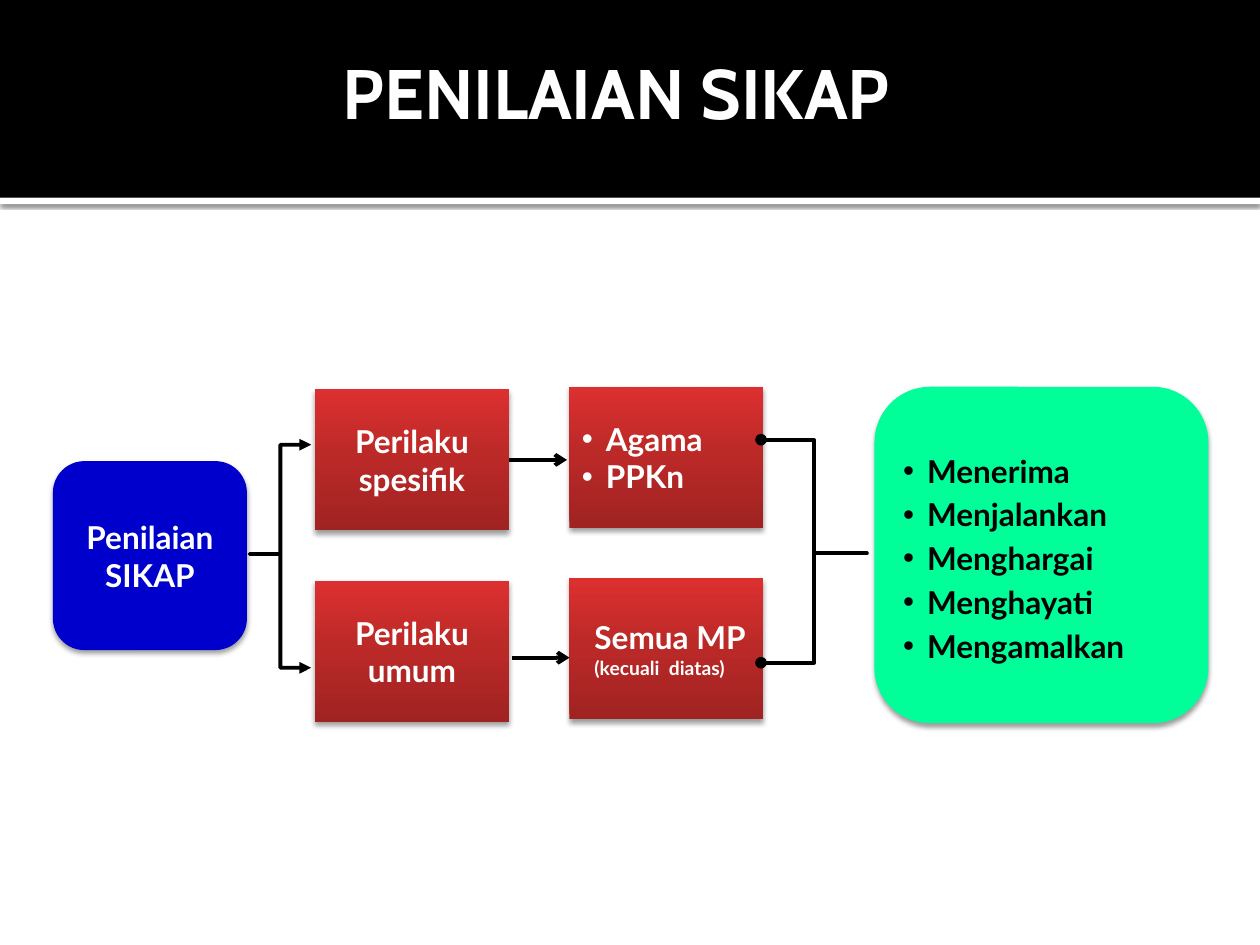
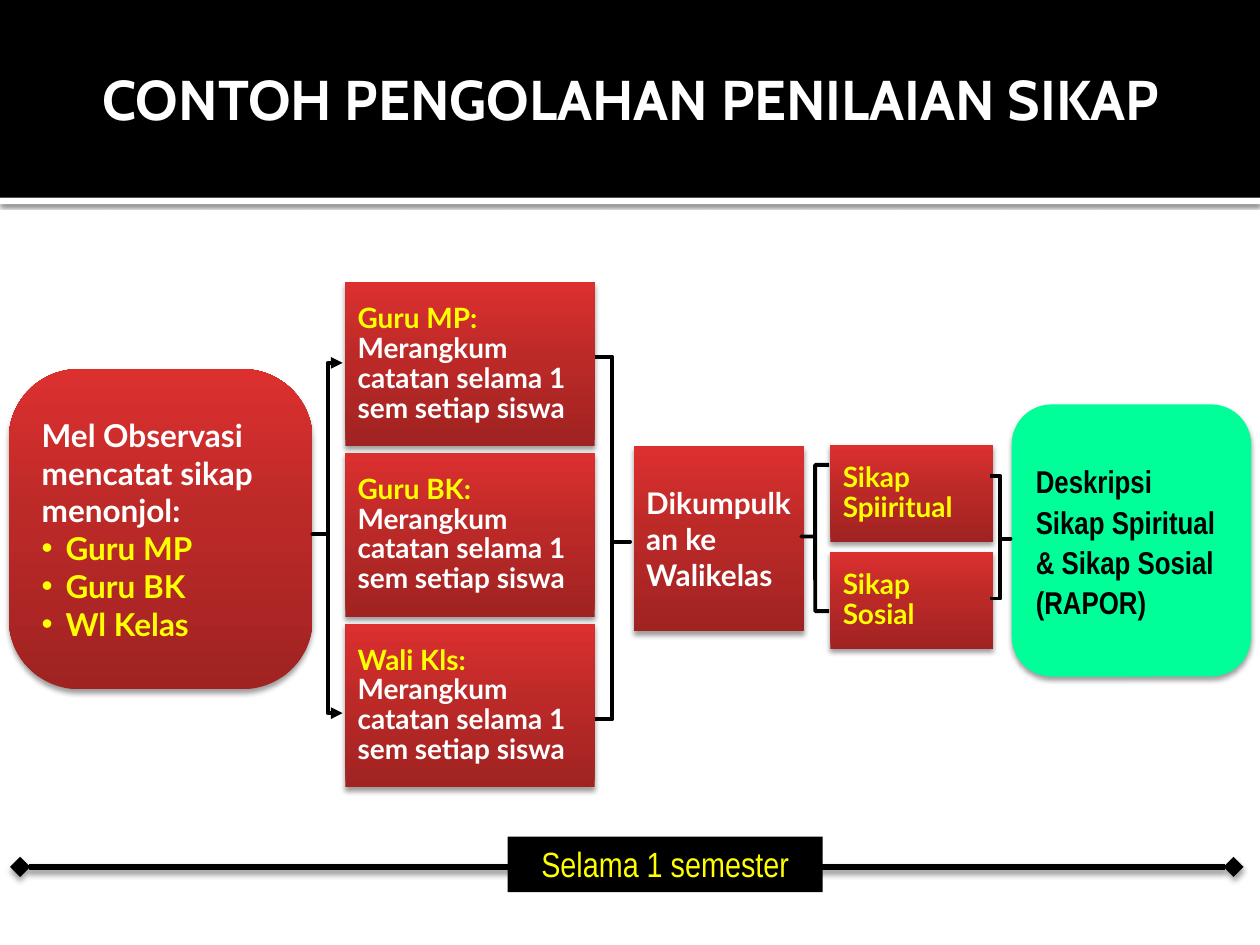
from copy import deepcopy

from lxml.etree import SubElement
from pptx import Presentation
from pptx.dml.color import RGBColor
from pptx.enum.shapes import MSO_CONNECTOR, MSO_SHAPE
from pptx.enum.text import MSO_ANCHOR, PP_ALIGN
from pptx.oxml.ns import qn
from pptx.util import Inches, Pt

BLACK = RGBColor(0x00, 0x00, 0x00)
WHITE = RGBColor(0xFF, 0xFF, 0xFF)
YELLOW = RGBColor(0xFF, 0xFF, 0x00)
BLUE = RGBColor(0x00, 0x00, 0xCC)
GREEN = RGBColor(0x00, 0xFF, 0x99)
RED_STOPS = [
    (0, RGBColor(0xA0, 0x23, 0x22)),
    (0.55, RGBColor(0xBC, 0x2A, 0x28)),
    (1, RGBColor(0xDC, 0x30, 0x2F)),
]

RECT, ROUND = MSO_SHAPE.RECTANGLE, MSO_SHAPE.ROUNDED_RECTANGLE
LEFT, CENTER = PP_ALIGN.LEFT, PP_ALIGN.CENTER
BODY_FONT, TITLE_FONT, NARROW_FONT = "Lato", "Cabin", "Arial Narrow"

# Shadows: opacity in percent, blur and distance in points
BOX_SHADOW = (38, 3.1, 2)
BAND_SHADOW = (60, 2.5, 0.8)

BULLET = {"margin": 0.19, "bullet": True}


def finish(shape, shadow=None, width=None, head=None, tail=None):
    """Set the outline, its ends and the shadow; no width means no outline."""
    properties = shape.element.spPr
    if width is None:
        shape.line.fill.background()
    else:
        shape.line.color.rgb = BLACK
        shape.line.width = Pt(width)
        for tag, end in (("a:headEnd", head), ("a:tailEnd", tail)):
            if end:
                SubElement(properties.find(qn("a:ln")), qn(tag), type=end)
    effects = SubElement(properties, qn("a:effectLst"))
    if shadow:
        opacity, blur, distance = shadow
        outer = SubElement(effects, qn("a:outerShdw"), blurRad=str(Pt(blur)),
                           dist=str(Pt(distance)), dir="5400000", rotWithShape="0")
        tint = SubElement(outer, qn("a:srgbClr"), val=str(BLACK))
        SubElement(tint, qn("a:alpha"), val=str(opacity * 1000))


def add_box(slide, at, fill, paragraphs=(), preset=RECT, shadow=BOX_SHADOW,
            align=LEFT, spacing=None, color=WHITE, size=18, font=BODY_FONT, bold=True):
    """Add a filled box; each paragraph is a text with a dict of its exceptions."""
    box = slide.shapes.add_shape(preset, *map(Inches, at))
    if fill is RED_STOPS:
        box.fill.gradient()
        box.fill.gradient_angle = 90
        stop_list = box.element.spPr.find(qn("a:gradFill")).find(qn("a:gsLst"))
        stop_list.append(deepcopy(stop_list[0]))
        for stop, (position, shade) in zip(box.fill.gradient_stops, RED_STOPS):
            stop.position = position
            stop.color.rgb = shade
    else:
        box.fill.solid()
        box.fill.fore_color.rgb = fill
    finish(box, shadow)

    frame = box.text_frame
    frame.word_wrap = True
    frame.vertical_anchor = MSO_ANCHOR.MIDDLE
    for number, (text, extra) in enumerate(paragraphs):
        paragraph = frame.add_paragraph() if number else frame.paragraphs[0]
        paragraph.alignment = align
        if spacing:
            paragraph.line_spacing = Pt(spacing)
        if "margin" in extra:
            margin = Inches(extra["margin"])
            layout = paragraph._p.get_or_add_pPr()
            layout.set("marL", str(margin))
            layout.set("indent", str(-margin if "bullet" in extra else 0))
            if "bullet" in extra:
                SubElement(layout, qn("a:buFont"), typeface="Arial")
                SubElement(layout, qn("a:buChar"), char="•")
        run = paragraph.add_run()
        run.text = text
        look = {"size": Pt(extra.get("size", size)), "name": font, "bold": bold}
        for attribute, value in look.items():
            setattr(run.font, attribute, value)
        run.font.color.rgb = extra.get("color", color)
    return box


prs = Presentation()
prs.slide_width, prs.slide_height = Inches(10), Inches(7.5)

# Shared header: black band, white strip with a shadow, centred title
slides = []
for title, size, at in [
    ("PENILAIAN SIKAP", 40, (0.3, 0.34, 9.18, 0.77)),
    ("CONTOH PENGOLAHAN PENILAIAN SIKAP", 32, (0.42, 0.46, 9.18, 0.64)),
]:
    slide = prs.slides.add_slide(prs.slide_layouts[6])
    slides.append(slide)
    add_box(slide, (0, 1.57, 10, 0.05), WHITE, shadow=BAND_SHADOW)
    add_box(slide, (0, 0, 10, 1.57), BLACK, shadow=None)
    heading = slide.shapes.add_textbox(*map(Inches, at)).text_frame
    heading.word_wrap = True
    heading.paragraphs[0].alignment = CENTER
    run = heading.paragraphs[0].add_run()
    run.text = title
    for attribute, value in {"size": Pt(size), "name": TITLE_FONT, "bold": True}.items():
        setattr(run.font, attribute, value)
    run.font.color.rgb = WHITE
assessment, processing = slides

# Slide 1: from attitude assessment to the five levels
add_box(assessment, (0.42, 3.66, 1.54, 1.5), BLUE, [("Penilaian SIKAP", {})],
        ROUND, align=CENTER)

subjects = [
    [("Agama", BULLET), ("PPKn", BULLET)],
    [("Semua MP", {"margin": 0.1}), ("(kecuali  diatas)", {"margin": 0.1, "size": 11})],
]
behaviours = []
for row, (behaviour, subject) in enumerate(zip(["spesifik", "umum"], subjects)):
    drop = row * 1.52
    behaviours.append(add_box(assessment, (2.5, 3.09 + drop, 1.54, 1.12), RED_STOPS,
                              [(f"Perilaku {behaviour}", {})], align=CENTER))
    add_box(assessment, (4.52, 3.07 + drop, 1.54, 1.12), RED_STOPS, subject)

levels = ["Menerima", "Menjalankan", "Menghargai", "Menghayati", "Mengamalkan"]
add_box(assessment, (6.94, 3.07, 2.65, 2.67), GREEN, [(level, BULLET) for level in levels],
        ROUND, spacing=25, color=BLACK)

for x, y in [(4.04, 3.65), (4.06, 5.22)]:
    arrow = assessment.shapes.add_connector(
        MSO_CONNECTOR.STRAIGHT, Inches(x), Inches(y), Inches(x + 0.46), Inches(y))
    if y == 3.65:
        arrow.begin_connect(behaviours[0], 3)
    finish(arrow, width=2.25, tail="arrow")

# Slide 2: from observation to the report
observers = ["Guru MP", "Guru BK", "Wl Kelas"]
observation = add_box(
    processing, (0.07, 2.93, 2.41, 2.54), RED_STOPS,
    [("Mel Observasi mencatat sikap menonjol:", {})]
    + [(observer, {**BULLET, "color": YELLOW}) for observer in observers], ROUND)
observation.adjustments[0] = 0.23

for row, teacher in enumerate(["Guru MP:", "Guru BK:", "Wali Kls:"]):
    add_box(processing, (2.74, 2.24 + row * 1.355, 1.98, 1.3), RED_STOPS,
            [(teacher, {"color": YELLOW}),
             ("Merangkum catatan selama 1 sem setiap siswa", {})],
            spacing=17, size=16)

add_box(processing, (5.03, 3.54, 1.35, 1.47), RED_STOPS,
        [("Dikumpulkan ke", {}), ("Walikelas", {})], size=17)

for row, attitude in enumerate(["Sikap Spiiritual", "Sikap Sosial"]):
    add_box(processing, (6.59, 3.53 + row * 0.85, 1.29, 0.77), RED_STOPS,
            [(attitude, {})], spacing=17, color=YELLOW, size=16)

report = ["Deskripsi", "Sikap Spiritual", "& Sikap Sosial", "(RAPOR)"]
add_box(processing, (8.03, 3.21, 1.9, 2.16), GREEN, [(line, {}) for line in report],
        ROUND, spacing=23, color=BLACK, font=NARROW_FONT)

semester = processing.shapes.add_connector(
    MSO_CONNECTOR.STRAIGHT, Inches(0.16), Inches(6.88), Inches(9.79), Inches(6.88))
finish(semester, BOX_SHADOW, 3.82, "diamond", "diamond")
add_box(processing, (4.03, 6.64, 2.5, 0.44), BLACK, [("Selama 1 semester", {})],
        shadow=None, align=CENTER, spacing=23, color=YELLOW, size=20,
        font=NARROW_FONT, bold=False)

# Square brackets that split and join the flow on both slides
for slide, at, rotation, end in [
    (assessment, (1.98, 3.53, 0.49, 1.77), 0, "triangle"),
    (assessment, (6.04, 3.49, 0.84, 1.77), 180, "oval"),
    (processing, (2.48, 2.88, 0.24, 2.78), 0, "triangle"),
    (processing, (4.72, 2.83, 0.28, 2.88), 180, None),
    (processing, (6.36, 3.69, 0.22, 1.16), 0, None),
    (processing, (7.86, 3.78, 0.16, 0.97), 180, None),
]:
    bracket = slide.shapes.add_shape(MSO_SHAPE.LEFT_BRACE, *map(Inches, at))
    bracket.rotation = rotation
    bracket.adjustments[0] = 0
    bracket.adjustments[1] = 0.49
    bracket.fill.background()
    finish(bracket, width=2.25, head=end, tail=end)

prs.save("out.pptx")
